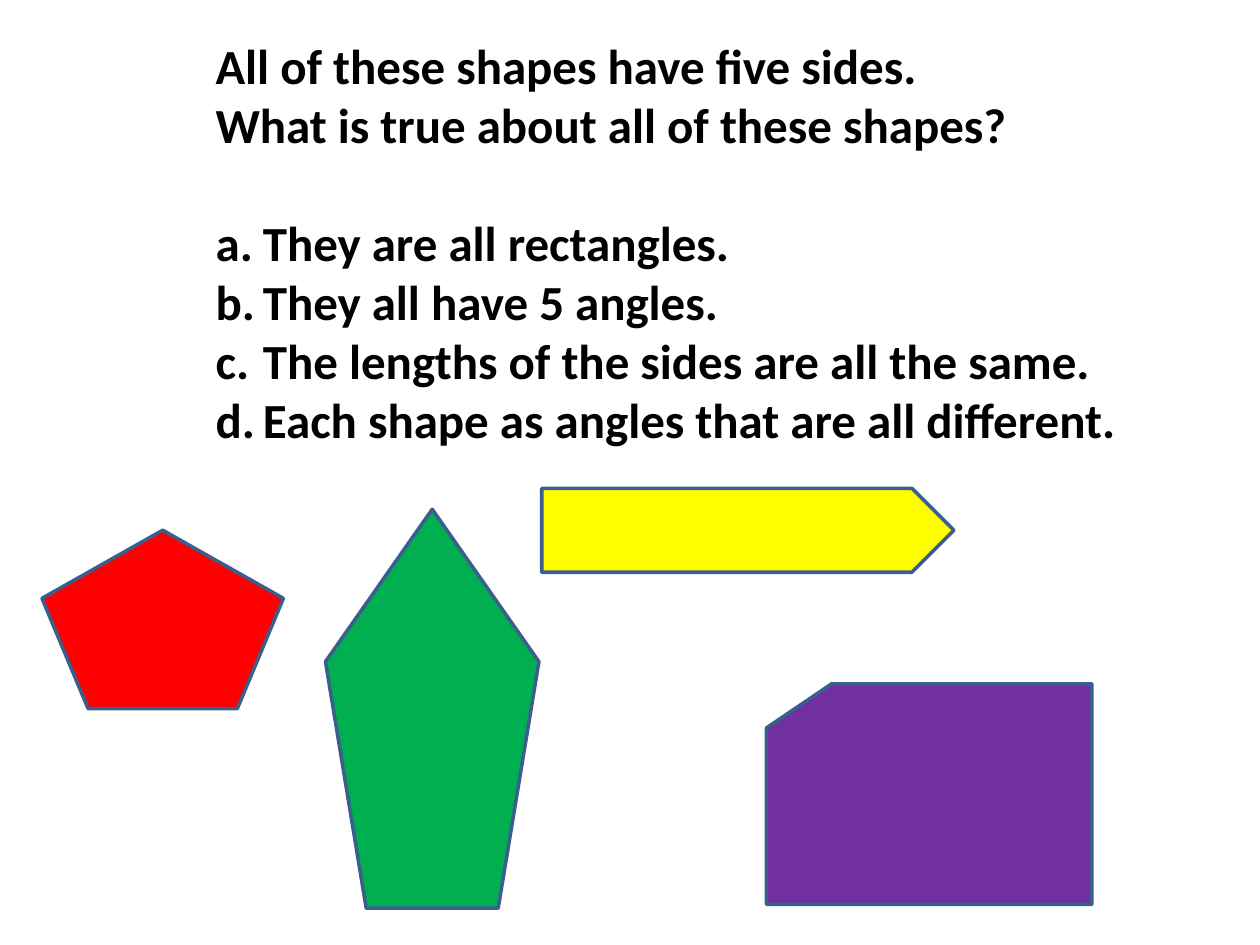
from lxml.etree import SubElement
from pptx import Presentation
from pptx.dml.color import RGBColor
from pptx.enum.shapes import MSO_SHAPE
from pptx.enum.text import MSO_ANCHOR, MSO_AUTO_SIZE, PP_ALIGN
from pptx.oxml.ns import qn
from pptx.util import Pt

BLACK = RGBColor(0x00, 0x00, 0x00)
RED = RGBColor(0xFF, 0x00, 0x00)
GREEN = RGBColor(0x00, 0xB0, 0x50)
YELLOW = RGBColor(0xFF, 0xFF, 0x00)
PURPLE = RGBColor(0x70, 0x30, 0xA0)
OUTLINE = RGBColor(0x3A, 0x5F, 0x8C)

QUESTION = [
    "All of these shapes have five sides.",
    "What is true about all of these shapes?",
]
ANSWERS = [
    "They are all rectangles.",
    "They all have 5 angles.",
    "The lengths of the sides are all the same.",
    "Each shape as angles that are all different.",
]
FIVE_SIDED_SHAPES = [
    (MSO_SHAPE.REGULAR_PENTAGON, RED, (24, 303, 138, 102)),
    (MSO_SHAPE.REGULAR_PENTAGON, GREEN, (186, 291, 122, 228)),
    (MSO_SHAPE.PENTAGON, YELLOW, (309.6, 279, 235.5, 48)),
    (MSO_SHAPE.FLOWCHART_CARD, PURPLE, (438, 390.75, 186, 126)),
]


class QuizSlide:
    """Holds the style and the current slide, and adds each kind of element."""

    font_name = "Calibri"
    font_size = Pt(28)
    answer_indent = Pt(27)
    outline_width = Pt(2)

    def __init__(self, deck):
        self.page = deck.slides.add_slide(deck.slide_layouts[1])

    def place(self, item, bounds):
        item.left, item.top, item.width, item.height = map(Pt, bounds)

    def fill_text(self, box, lines, bounds, lettered=False):
        self.place(box, bounds)
        frame = box.text_frame
        frame.auto_size = MSO_AUTO_SIZE.NONE
        frame.word_wrap = False
        frame.vertical_anchor = MSO_ANCHOR.TOP
        for index, line in enumerate(lines):
            para = frame.add_paragraph() if index else frame.paragraphs[0]
            para.alignment = PP_ALIGN.LEFT
            para.space_before = Pt(0)
            if lettered:
                self.add_letter(para)
            span = para.add_run()
            span.text = line
            span.font.name = self.font_name
            span.font.size = self.font_size
            span.font.bold = True
            span.font.color.rgb = BLACK

    def add_letter(self, para):
        properties = para._p.get_or_add_pPr()
        properties.set("marL", str(self.answer_indent))
        properties.set("indent", str(-self.answer_indent))
        SubElement(properties, qn("a:buFont"), typeface="+mj-lt")
        SubElement(properties, qn("a:buAutoNum"), type="alphaLcPeriod")

    def add_question(self, lines, bounds):
        self.fill_text(self.page.shapes.title, lines, bounds)

    def add_answers(self, lines, bounds):
        self.fill_text(self.page.placeholders[1], lines, bounds, lettered=True)

    def add_polygon(self, kind, color, bounds):
        polygon = self.page.shapes.add_shape(kind, *map(Pt, bounds))
        polygon.shadow.inherit = False
        polygon.fill.solid()
        polygon.fill.fore_color.rgb = color
        polygon.line.color.rgb = OUTLINE
        polygon.line.width = self.outline_width


def main():
    deck = Presentation()
    deck.slide_width, deck.slide_height = Pt(720), Pt(540)
    quiz = QuizSlide(deck)
    quiz.add_question(QUESTION, (116, 16.5, 535.5, 75))
    quiz.add_answers(ANSWERS, (116, 118, 535.5, 143))
    for kind, color, bounds in FIVE_SIDED_SHAPES:
        quiz.add_polygon(kind, color, bounds)
    deck.save("out.pptx")


if __name__ == "__main__":
    main()
